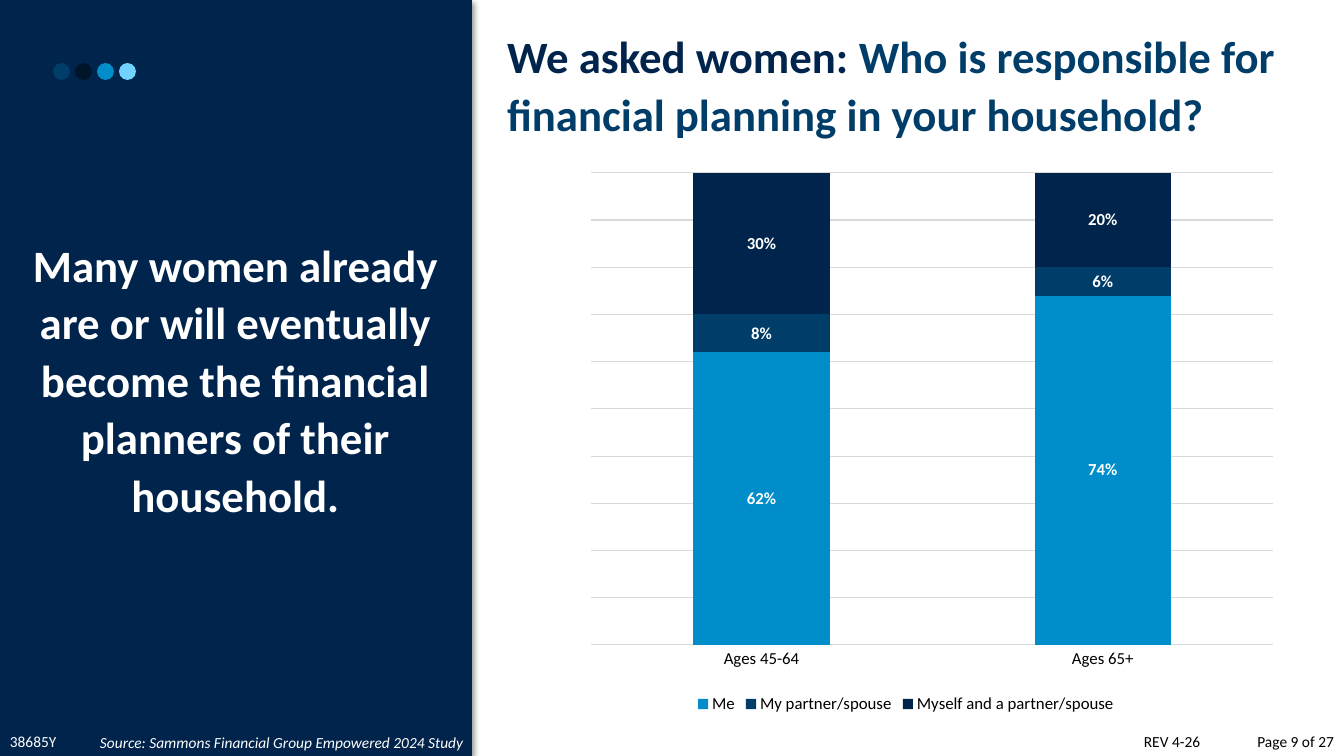
from lxml import etree
from pptx import Presentation
from pptx import util as u
from pptx.chart.data import CategoryChartData
from pptx.dml.color import RGBColor
from pptx.enum import chart as ch
from pptx.enum import shapes, text
from pptx.oxml import parse_xml
from pptx.oxml.ns import nsdecls, qn

COLORS = {
    "navy": "00244B", "blue": "003D69", "sky": "008DCA", "ink": "00142A",
    "ice": "71D3FF", "white": "FFFFFF", "black": "000000", "grid": "D9D9D9",
}
FONT = "Calibri"
WIDTH, HEIGHT = 1344, 756
PANEL_WIDTH = 472
FOOTER_TOP, FOOTER_HEIGHT = 727, 29


def px(length):
    return round(length * 914400 / 100.8)


def rgb(name):
    return RGBColor.from_string(COLORS[name])


def style_font(font, size, color, bold=False, italic=False):
    font.name = FONT
    font.size = u.Pt(size)
    font.color.rgb = rgb(color)
    font.bold = bold
    font.italic = italic


def place(item, box):
    item.left, item.top, item.width, item.height = map(px, box)


def add_filled(slide, kind, box, color):
    filled = slide.shapes.add_shape(kind, *map(px, box))
    filled.shadow.inherit = False
    filled.fill.solid()
    filled.fill.fore_color.rgb = rgb(color)
    filled.line.fill.background()
    return filled


def add_line_of_text(slide, box, words, size, color, align=text.PP_ALIGN.LEFT,
                     bold=False, italic=False):
    frame = slide.shapes.add_textbox(*map(px, box)).text_frame
    frame.word_wrap = True
    frame.text = words
    paragraph = frame.paragraphs[0]
    paragraph.alignment = align
    style_font(paragraph.runs[0].font, size, color, bold, italic)
    return paragraph


def add_panel(slide, box):
    left, top, width, height = box
    panel = add_filled(slide, shapes.MSO_SHAPE.RECTANGLE, box, "navy")
    panel._element.spPr.find(qn("a:effectLst")).append(parse_xml(
        f'<a:outerShdw {nsdecls("a")} blurRad="50800" dist="38100" dir="2700000" '
        f'algn="tl" rotWithShape="0"><a:srgbClr val="{COLORS["black"]}">'
        '<a:alpha val="40000"/></a:srgbClr></a:outerShdw>'))
    statement = add_line_of_text(
        slide, (left, top + 229, width - 1, 298),
        "Many women already are or will eventually become the financial "
        "planners of their household.",
        32, "white", text.PP_ALIGN.CENTER, bold=True)
    statement.line_spacing = 1.07
    for index, color in enumerate(("blue", "ink", "sky", "ice")):
        add_filled(slide, shapes.MSO_SHAPE.OVAL,
                   (left + 53 + 22 * index, top + 63, 17, 17), color)


def add_heading(slide, box):
    heading = slide.shapes.title
    place(heading, box)
    frame = heading.text_frame
    frame.auto_size = text.MSO_AUTO_SIZE.NONE
    frame.word_wrap = True
    frame.vertical_anchor = text.MSO_ANCHOR.TOP
    paragraph = frame.paragraphs[0]
    paragraph.alignment = text.PP_ALIGN.LEFT
    paragraph.line_spacing = 1.07
    paragraph._p.get_or_add_pPr().set("marL", str(px(25)))
    for words, color in (
        ("We asked women: ", "navy"),
        ("Who is responsible for financial planning in your household?", "blue"),
    ):
        run = paragraph.add_run()
        run.text = words
        style_font(run.font, 32, color, bold=True)


def set_plot_layout(chart, x, y, w, h):
    plot_area = chart._chartSpace.chart.plotArea
    for old in plot_area.findall(qn("c:layout")):
        plot_area.remove(old)
    layout = parse_xml(f'<c:layout {nsdecls("c")}><c:manualLayout/></c:layout>')
    settings = (("layoutTarget", "inner"), ("xMode", "edge"), ("yMode", "edge"),
                ("x", x), ("y", y), ("w", w), ("h", h))
    for tag, value in settings:
        etree.SubElement(layout[0], qn(f"c:{tag}")).set("val", str(value))
    plot_area.insert(0, layout)


def add_answers_chart(slide, box):
    answers = CategoryChartData(number_format="0%")
    answers.categories = ["Ages 45-64", "Ages 65+"]
    answers.add_series("Me", (0.62, 0.74))
    answers.add_series("My partner/spouse", (0.08, 0.06))
    answers.add_series("Myself and a partner/spouse", (0.3, 0.2))
    chart = slide.shapes.add_chart(
        ch.XL_CHART_TYPE.COLUMN_STACKED, *map(px, box), answers).chart
    chart.has_title = False
    style_font(chart.font, 10, "black")

    chart.has_legend = True
    chart.legend.position = ch.XL_LEGEND_POSITION.BOTTOM
    chart.legend.include_in_layout = False
    style_font(chart.legend.font, 12, "black")

    ages = chart.category_axis
    ages.major_tick_mark = ch.XL_TICK_MARK.NONE
    style_font(ages.tick_labels.font, 12, "black")
    shares = chart.value_axis
    shares.visible = False
    shares.minimum_scale, shares.maximum_scale, shares.major_unit = 0, 1, 0.1
    shares.has_major_gridlines = True
    for line in (ages.format.line, shares.major_gridlines.format.line):
        line.color.rgb = rgb("grid")
        line.width = u.Pt(0.75)

    plot = chart.plots[0]
    plot.vary_by_categories = False
    plot.gap_width, plot.overlap = 150, 100
    for series, color in zip(plot.series, ("sky", "blue", "navy")):
        series.format.fill.solid()
        series.format.fill.fore_color.rgb = rgb(color)
        labels = series.data_labels
        labels.show_value = True
        labels.position = ch.XL_LABEL_POSITION.CENTER
        labels.number_format = "0%"
        labels.number_format_is_linked = False
        style_font(labels.font, 12, "white", bold=True)
    set_plot_layout(chart, 0.08, 0.03, 0.91, 0.84)


def add_footer(slide, box):
    left, top, width, height = box
    right = left + width
    add_line_of_text(slide, (left, top, 90, height), "38685Y", 11, "white")
    add_line_of_text(slide, (left + 90, top, 400, height),
                     "Source: Sammons Financial Group Empowered 2024 Study",
                     11, "white", italic=True).line_spacing = 1.07
    add_line_of_text(slide, (right - 210, top, 100, height),
                     "REV 4-26", 11, "black")
    add_line_of_text(slide, (right - 108, top, 108, height),
                     "Page 9 of 27", 11, "black", text.PP_ALIGN.RIGHT)


def main():
    deck = Presentation()
    deck.slide_width, deck.slide_height = px(WIDTH), px(HEIGHT)
    slide = deck.slides.add_slide(deck.slide_layouts[5])
    add_answers_chart(slide, (531, 156, 750, 562))
    add_panel(slide, (0, 0, PANEL_WIDTH, HEIGHT))
    add_heading(slide, (PANEL_WIDTH, 20, WIDTH - PANEL_WIDTH, 124))
    add_footer(slide, (0, FOOTER_TOP, WIDTH, FOOTER_HEIGHT))
    deck.save("out.pptx")


if __name__ == "__main__":
    main()
